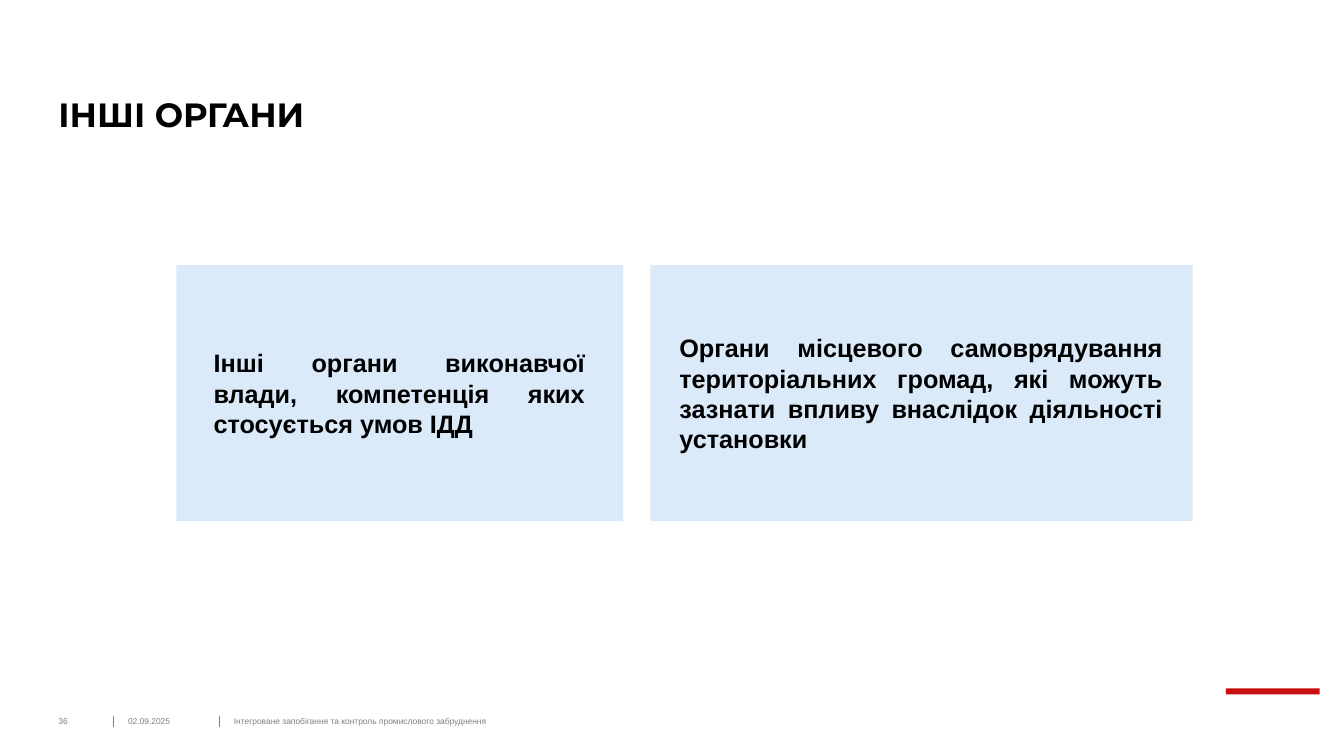
import dataclasses
import typing

import pptx
import pptx.dml.color
import pptx.enum.shapes
import pptx.enum.text
import pptx.util
from lxml import etree

Inches = pptx.util.Inches
ALIGN = pptx.enum.text.PP_ALIGN
ANCHOR = pptx.enum.text.MSO_ANCHOR


def tint(code: str) -> pptx.dml.color.RGBColor:
    return pptx.dml.color.RGBColor.from_string(code)


@dataclasses.dataclass(frozen=True)
class Theme:
    ink: str = "000000"
    gray: str = "7F7F7F"
    red: str = "C80F0F"
    pale: str = "DBEAF9"
    head: str = "Montserrat"
    body: str = "Arial"
    title: float = 24
    main: float = 18
    foot: float = 6


THEME = Theme()


class Box(typing.NamedTuple):
    left: float
    top: float
    width: float
    height: float


@dataclasses.dataclass(frozen=True)
class Style:
    face: str
    size: float
    color: str
    bold: bool
    anchor: ANCHOR
    align: ALIGN = ALIGN.LEFT
    side: float = 0
    edge: float = 0
    pitch: float = 1


@dataclasses.dataclass(frozen=True)
class Label:
    words: str
    box: Box
    style: Style


@dataclasses.dataclass(frozen=True)
class Card:
    panel: Box
    label: Label


TITLE = Style(THEME.head, THEME.title, THEME.ink, True, ANCHOR.BOTTOM, pitch=0.9)
FOOT = Style(THEME.body, THEME.foot, THEME.gray, False, ANCHOR.MIDDLE)
MAIN = Style(THEME.body, THEME.main, THEME.ink, True, ANCHOR.TOP,
             ALIGN.JUSTIFY, side=0.1, edge=0.05)

HEADING = Label("ІНШІ ОРГАНИ", Box(0.58, 0.4, 8.03, 0.94), TITLE)
FOOTER = [
    Label("36", Box(0.58, 7.1, 0.51, 0.1), FOOT),
    Label("02.09.2025", Box(1.27, 7.1, 0.79, 0.1), FOOT),
    Label("Інтегроване запобігання та контроль промислового забруднення",
          Box(2.32, 7.1, 7.48, 0.1), FOOT),
]
CARDS = [
    Card(Box(1.75, 2.63, 4.43, 2.54),
         Label("Інші органи виконавчої влади, компетенція яких стосується умов ІДД",
               Box(2.02, 3.4, 3.88, 1.01), MAIN)),
    Card(Box(6.45, 2.63, 5.38, 2.54),
         Label("Органи місцевого самоврядування територіальних громад, "
               "які можуть зазнати впливу внаслідок діяльності установки",
               Box(6.64, 3.25, 4.99, 1.31), MAIN)),
]
ACCENT = Box(12.16, 6.83, 0.93, 0.06)
RULES = [1.13, 2.18]


def apply(target: typing.Any, values: dict[str, typing.Any]) -> None:
    for name, value in values.items():
        setattr(target, name, value)


def add_block(slide: typing.Any, box: Box, color: str) -> None:
    block = slide.shapes.add_shape(
        pptx.enum.shapes.MSO_SHAPE.RECTANGLE, *map(Inches, box))
    block.shadow.inherit = False
    block.fill.solid()
    block.fill.fore_color.rgb = tint(color)
    block.line.fill.background()


def add_rule(slide: typing.Any, left: float) -> None:
    rule = slide.shapes.add_connector(
        pptx.enum.shapes.MSO_CONNECTOR.STRAIGHT,
        Inches(left), Inches(7.1), Inches(left), Inches(7.21))
    rule.line.color.rgb = tint(THEME.gray)
    rule.line.width = pptx.util.Pt(0.75)
    space = "http://schemas.openxmlformats.org/drawingml/2006/main"
    etree.SubElement(rule.element.spPr, f"{{{space}}}effectLst")


def add_label(slide: typing.Any, label: Label) -> None:
    style = label.style
    frame = slide.shapes.add_textbox(*map(Inches, label.box)).text_frame
    apply(frame, {
        "word_wrap": True,
        "vertical_anchor": style.anchor,
        "margin_left": Inches(style.side),
        "margin_right": Inches(style.side),
        "margin_top": Inches(style.edge),
        "margin_bottom": Inches(style.edge),
    })
    para = frame.paragraphs[0]
    apply(para, {"alignment": style.align, "line_spacing": style.pitch})
    run = para.add_run()
    run.text = label.words
    apply(run.font, {"name": style.face, "size": pptx.util.Pt(style.size),
                     "bold": style.bold})
    run.font.color.rgb = tint(style.color)


def main() -> None:
    deck = pptx.Presentation()
    apply(deck, {"slide_width": Inches(13.33), "slide_height": Inches(7.5)})
    slide = deck.slides.add_slide(deck.slide_layouts[6])
    for left in RULES:
        add_rule(slide, left)
    add_block(slide, ACCENT, THEME.red)
    for label in [HEADING, *FOOTER]:
        add_label(slide, label)
    for card in CARDS:
        add_block(slide, card.panel, THEME.pale)
        add_label(slide, card.label)
    deck.save("out.pptx")


if __name__ == "__main__":
    main()
